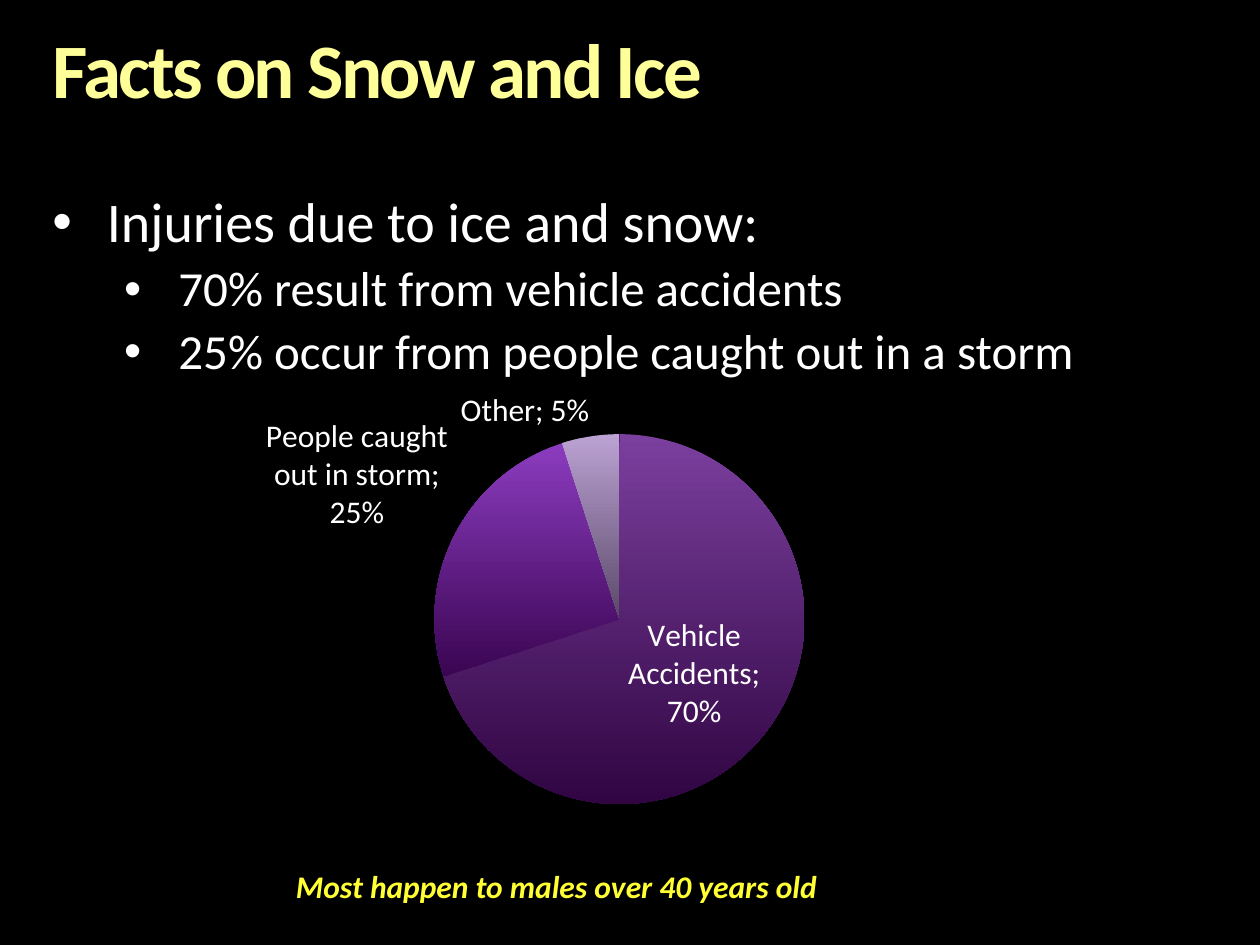
from dataclasses import dataclass

from lxml import etree
from pptx import Presentation
from pptx import util as u
from pptx.chart import data as chart_data
from pptx.dml import color
from pptx.enum import chart as chart_enum
from pptx.enum import text
from pptx.oxml import ns


@dataclass(frozen=True)
class Theme:
    font: str = "Calibri"
    background: str = "000000"
    title: str = "FFFF99"
    body: str = "FFFFFF"
    note: str = "FFFF33"
    slices: tuple = (("7B3F9E", "300542"), ("8C3CBF", "3A0552"), ("BBA2D3", "5A4868"))
    title_size: int = 44
    body_sizes: tuple = (32, 28)
    label_size: int = 18


THEME = Theme()


def rgb(value):
    return color.RGBColor.from_string(value)


def style(font, size, fill, bold=False, italic=False):
    font.name = THEME.font
    font.size = u.Pt(size)
    font.color.rgb = rgb(fill)
    font.bold = bold
    font.italic = italic


def add_child(parent, tag, **attributes):
    return etree.SubElement(parent, ns.qn(tag), attributes)


def set_frame(box, margin=None):
    frame = box.text_frame
    frame.word_wrap = True
    frame.vertical_anchor = text.MSO_ANCHOR.TOP
    if margin is not None:
        frame.margin_left = frame.margin_right = u.Pt(margin)
        frame.margin_top = frame.margin_bottom = u.Pt(margin)
    return frame


def add_box(page, left, top, width, height):
    return page.shapes.add_textbox(u.Pt(left), u.Pt(top), u.Pt(width), u.Pt(height))


def set_title(page, words):
    title = page.shapes.title
    title.left, title.top, title.width, title.height = map(u.Pt, (30, 18, 660, 48))
    para = set_frame(title, 0).paragraphs[0]
    para.alignment = text.PP_ALIGN.LEFT
    para.line_spacing = 0.9
    span = para.add_run()
    span.text = words
    span._r.get_or_add_rPr().set("spc", "-150")
    style(para.font, THEME.title_size, THEME.title, bold=True)


def add_bullets(page, items):
    frame = set_frame(add_box(page, 30, 111, 660, 109), 0)
    for index, (level, words) in enumerate(items):
        para = frame.paragraphs[0] if index == 0 else frame.add_paragraph()
        para.text = words
        para.level = level
        properties = para._p.get_or_add_pPr()
        properties.set("marL", str(u.Pt((31, 72)[level])))
        properties.set("indent", str(u.Pt(-31)))
        add_child(properties, "a:buFont", typeface="Arial")
        add_child(properties, "a:buChar", char="•")
        size = THEME.body_sizes[level]
        para.line_spacing = 0.9
        if index:
            para.space_before = u.Pt(0.2 * size)
        style(para.font, size, THEME.body)


def place_plot(chart, **area):
    plot_area = chart._chartSpace.find(".//" + ns.qn("c:plotArea"))
    layout = plot_area.find(ns.qn("c:layout"))
    if layout is None:
        layout = etree.Element(ns.qn("c:layout"))
        plot_area.insert(0, layout)
    manual = add_child(layout, "c:manualLayout")
    add_child(manual, "c:layoutTarget", val="inner")
    for mode in ("xMode", "yMode"):
        add_child(manual, f"c:{mode}", val="edge")
    for name, value in area.items():
        add_child(manual, f"c:{name}", val=str(value))


def label_slices(series):
    labels = series.data_labels
    labels.number_format = "0%"
    labels.number_format_is_linked = False
    labels.show_value = True
    labels.position = chart_enum.XL_LABEL_POSITION.OUTSIDE_END
    series.points[0].data_label.position = chart_enum.XL_LABEL_POSITION.CENTER
    for name in list(series._element.iter(ns.qn("c:showCatName"))):
        name.set("val", "1")
        separator = etree.Element(ns.qn("c:separator"))
        separator.text = "; "
        name.getparent().find(ns.qn("c:showBubbleSize")).addnext(separator)


def add_pie(page, shares):
    data = chart_data.CategoryChartData(number_format="0%")
    data.categories = list(shares)
    data.add_series("Series 1", list(shares.values()))
    bounds = map(u.Pt, (48, 222, 612, 261))
    chart = page.shapes.add_chart(chart_enum.XL_CHART_TYPE.PIE, *bounds, data).chart
    chart.has_title = False
    chart.has_legend = False
    style(chart.font, THEME.label_size, THEME.body)
    plot = chart.plots[0]
    plot.vary_by_categories = True
    series = plot.series[0]
    for index, shades in enumerate(THEME.slices):
        slice_format = series.points[index].format
        slice_format.line.fill.background()
        fill = slice_format.fill
        fill.gradient()
        fill.gradient_angle = 270
        for stop, shade in zip(fill.gradient_stops, shades):
            stop.color.rgb = rgb(shade)
    label_slices(series)
    place_plot(chart, x=0.08, y=0.1, w=0.84, h=0.81)


def add_note(page, words):
    para = set_frame(add_box(page, 162, 492, 390, 29)).paragraphs[0]
    para.text = words
    style(para.font, THEME.label_size, THEME.note, bold=True, italic=True)


def main():
    deck = Presentation()
    deck.slide_width, deck.slide_height = u.Pt(720), u.Pt(540)
    page = deck.slides.add_slide(deck.slide_layouts[5])
    page.background.fill.solid()
    page.background.fill.fore_color.rgb = rgb(THEME.background)
    set_title(page, "Facts on Snow and Ice")
    add_bullets(page, [
        (0, "Injuries due to ice and snow:"),
        (1, "70% result from vehicle accidents"),
        (1, "25% occur from people caught out in a storm"),
    ])
    add_pie(page, {
        "Vehicle Accidents": 0.7,
        "People caught out in storm": 0.25,
        "Other": 0.05,
    })
    add_note(page, "Most happen to males over 40 years old")
    deck.save("out.pptx")


if __name__ == "__main__":
    main()
